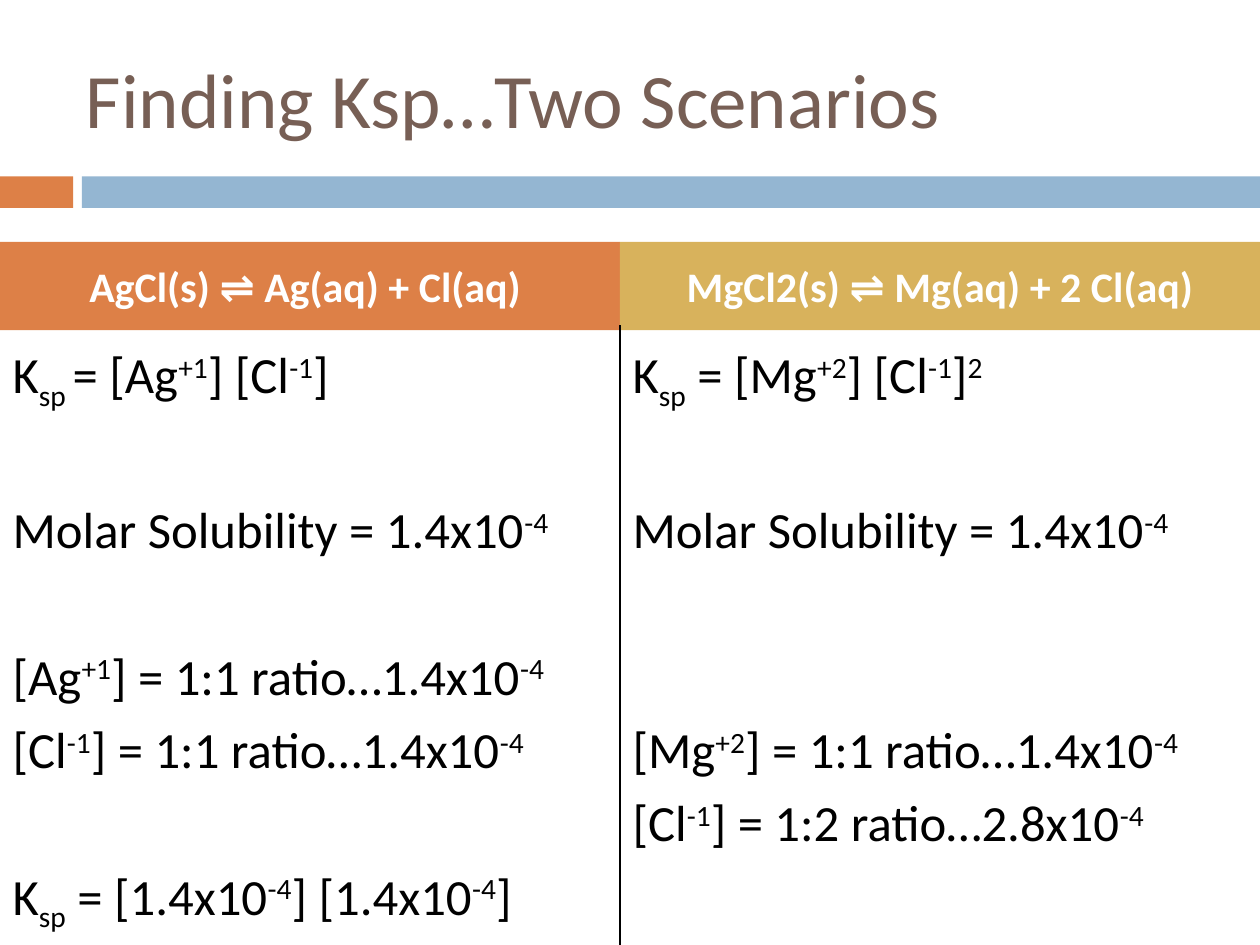
import pptx
import pptx.util
import pptx.dml.color
import pptx.enum.shapes
import pptx.enum.text
import pptx.oxml.xmlchemy
import lxml.etree

Inches = pptx.util.Inches
Pt = pptx.util.Pt
ANCHOR = pptx.enum.text.MSO_ANCHOR
ALIGN = pptx.enum.text.PP_ALIGN
NS = "{http://schemas.openxmlformats.org/drawingml/2006/main}"


def paint(color_format, hex_color):
    color_format.rgb = pptx.dml.color.RGBColor.from_string(hex_color)


def write(paragraph, text, size, color, bold, align, before):
    layout = {"alignment": align, "space_before": Pt(before), "space_after": Pt(0)}
    for key, value in layout.items():
        setattr(paragraph, key, value)
    for piece in text.split("|"):
        shift = {"_": "-25000", "^": "30000"}.get(piece[:1])
        run = paragraph.add_run()
        run.text = piece[1:] if shift else piece
        for key, value in {"name": "Calibri", "size": Pt(size), "bold": bold}.items():
            setattr(run.font, key, value)
        paint(run.font.color, color)
        if shift:
            run.font._element.set("baseline", shift)


prs = pptx.Presentation()
prs.slide_width, prs.slide_height = Inches(10), Inches(7.5)
slide = prs.slides.add_slide(prs.slide_layouts[4])
holders = {holder.placeholder_format.idx: holder for holder in slide.placeholders}

divide = 4.92
bar_top, bar_height = 1.4, 0.25
head_top, head_height = 1.92, 0.7
work_top = 2.67
orange = "DD8047"

for left, width, color in [(0, 0.58, orange), (0.65, 9.35, "94B6D2")]:
    bar = slide.shapes.add_shape(
        pptx.enum.shapes.MSO_SHAPE.RECTANGLE,
        Inches(left), Inches(bar_top), Inches(width), Inches(bar_height))
    bar.shadow.inherit = False
    bar.fill.solid()
    paint(bar.fill.fore_color, color)
    bar.line.fill.background()

places = {
    0: (0.58, 0.3, 8.92, 0.95, ANCHOR.MIDDLE),
    1: (0, head_top, divide, head_height, ANCHOR.MIDDLE),
    2: (0, work_top, 5.17, 7.5 - work_top, ANCHOR.TOP),
    3: (divide, head_top, 10 - divide, head_height, ANCHOR.MIDDLE),
    4: (divide, work_top, 10 - divide, 7.5 - work_top, ANCHOR.TOP),
}
for idx, (left, top, width, height, anchor) in places.items():
    box = {"left": Inches(left), "top": Inches(top),
           "width": Inches(width), "height": Inches(height)}
    for key, value in box.items():
        setattr(holders[idx], key, value)
    frame = {"vertical_anchor": anchor, "word_wrap": True,
             "auto_size": pptx.enum.text.MSO_AUTO_SIZE.NONE}
    for key, value in frame.items():
        setattr(holders[idx].text_frame, key, value)

write(holders[0].text_frame.paragraphs[0], "Finding Ksp…Two Scenarios",
      44, "775F55", False, ALIGN.LEFT, 0)

reactions = {
    1: ("AgCl(s) ⇌ Ag(aq) + Cl(aq) ", orange),
    3: ("MgCl2(s) ⇌ Mg(aq) + 2 Cl(aq)", "D8B25C"),
}
for idx, (reaction, color) in reactions.items():
    holders[idx].fill.solid()
    paint(holders[idx].fill.fore_color, color)
    write(holders[idx].text_frame.paragraphs[0], reaction,
          24, "FFFFFF", True, ALIGN.CENTER, 7)

solubility = "Molar Solubility = 1.4x10|^-4"
steps = {
    2: [(0, "K|_sp |= [Ag|^+1|] [Cl|^-1|]"),
        (1, solubility),
        (1, "[Ag|^+1|] = 1:1 ratio…1.4x10|^-4"),
        (0, "[Cl|^-1|] = 1:1 ratio…1.4x10|^-4"),
        (1, "K|_sp| = [1.4x10|^-4|] [1.4x10|^-4|]")],
    4: [(0, "K|_sp| = [Mg|^+2|] [Cl|^-1|]|^2"),
        (1, solubility),
        (2, "[Mg|^+2|] = 1:1 ratio…1.4x10|^-4"),
        (0, "[Cl|^-1|] = 1:2 ratio…2.8x10|^-4")],
}
row_pitch = 42
for idx, lines in steps.items():
    work = holders[idx].text_frame
    for number, (skipped_rows, line) in enumerate(lines):
        step = work.add_paragraph() if number else work.paragraphs[0]
        write(step, line, 29, "000000", False, ALIGN.LEFT, 7 + skipped_rows * row_pitch)
        props = step._p.get_or_add_pPr()
        for key, inches in {"marL": 0.35, "indent": -0.35}.items():
            props.set(key, str(Inches(inches)))
        lxml.etree.SubElement(props, NS + "buNone")

divider = slide.shapes.add_connector(
    pptx.enum.shapes.MSO_CONNECTOR.STRAIGHT,
    Inches(divide), Inches(2.58), Inches(divide), prs.slide_height)
paint(divider.line.color, "000000")
divider.line.width = Pt(0.79)
lxml.etree.SubElement(divider._element.spPr, NS + "effectLst")

prs.save("out.pptx")
